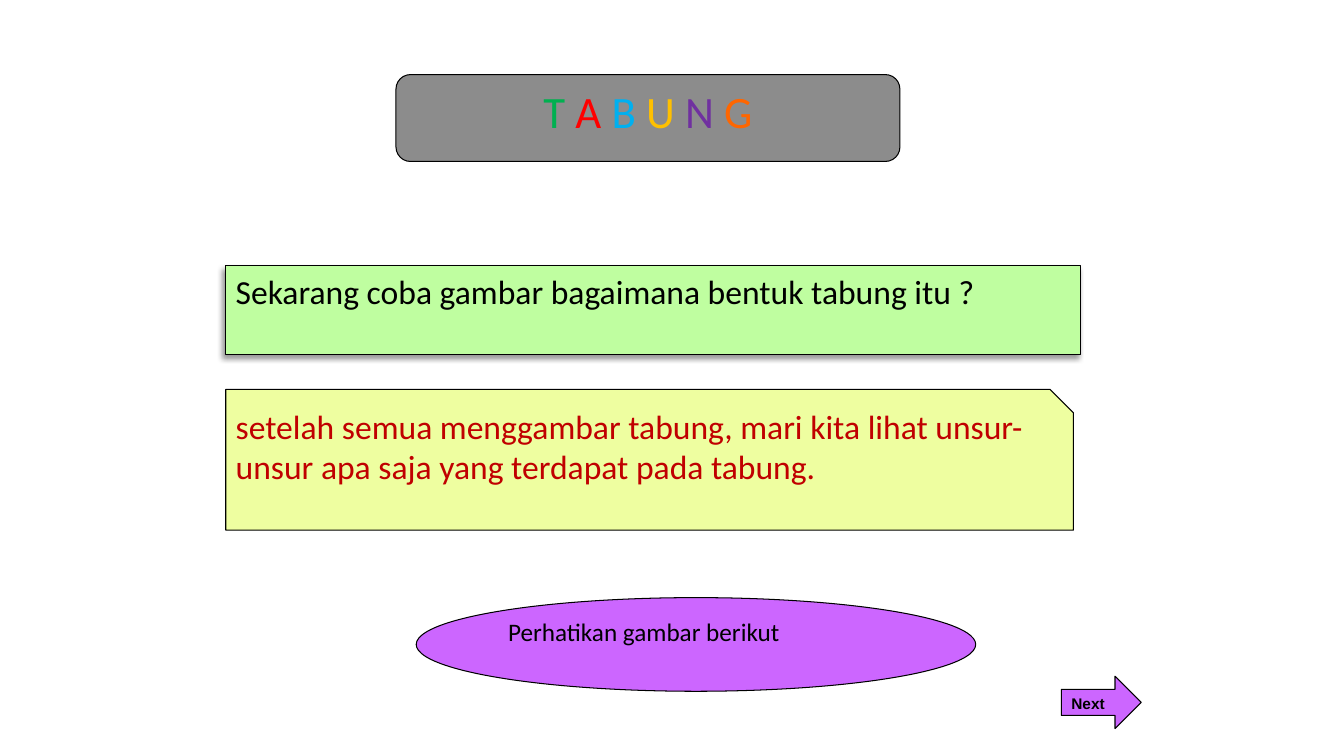
from dataclasses import dataclass

import pptx
import pptx.dml.color
import pptx.enum.shapes
import pptx.enum.text
import pptx.oxml
import pptx.oxml.ns
import pptx.presentation
import pptx.shapes.autoshape
import pptx.slide
import pptx.util

Cm = pptx.util.Cm
Pt = pptx.util.Pt
Geometry = pptx.enum.shapes.MSO_SHAPE
Align = pptx.enum.text.PP_ALIGN

BLACK = "000000"
PURPLE = "CC66FF"


@dataclass(frozen=True)
class Panel:
    geometry: Geometry
    left: float
    top: float
    width: float
    height: float
    fill: str
    runs: tuple[tuple[str, str], ...]  # text and colour
    size: int
    font: str = "Calibri"
    bold: bool = False
    align: Align = Align.LEFT
    shadow: bool = False


PANELS = [
    Panel(Geometry.ROUNDED_RECTANGLE, 9.98, 1.88, 12.7, 2.19, "8C8C8C",
          (("T ", "00B050"), ("A ", "FF0000"), ("B ", "00B0F0"),
           ("U ", "FFC000"), ("N ", "7030A0"), ("G", "FF6600")),
          32, align=Align.CENTER),
    Panel(Geometry.RECTANGLE, 5.69, 6.69, 21.54, 2.24, "BFFEA0",
          (("Sekarang coba gambar bagaimana bentuk tabung itu ?", BLACK),),
          24, shadow=True),
    Panel(Geometry.SNIP_1_RECTANGLE, 5.69, 9.81, 21.36, 3.55, "EEFEA0",
          (("setelah semua menggambar tabung, mari kita lihat "
            "unsur-unsur apa saja yang terdapat pada tabung.", "C00000"),),
          24),
    Panel(Geometry.OVAL, 10.49, 15.06, 14.1, 2.36, PURPLE,
          (("Perhatikan gambar berikut", BLACK),), 18),
    Panel(Geometry.RIGHT_ARROW, 26.75, 17.04, 2.01, 1.32, PURPLE,
          (("Next", BLACK),), 11, font="Arial", bold=True),
]


def rgb(color: str) -> pptx.dml.color.RGBColor:
    return pptx.dml.color.RGBColor.from_string(color)


def add_soft_shadow(shape: pptx.shapes.autoshape.Shape) -> None:
    """Cast a blurred shadow towards the lower left."""
    effects = shape.element.spPr.find(pptx.oxml.ns.qn("a:effectLst"))
    effects.append(pptx.oxml.parse_xml(
        f'<a:outerShdw {pptx.oxml.ns.nsdecls("a")} blurRad="{Pt(4)}" '
        f'dist="{Pt(3)}" dir="{135 * 60000}" algn="tr" rotWithShape="0">'
        f'<a:srgbClr val="{BLACK}"><a:alpha val="40000"/></a:srgbClr>'
        '</a:outerShdw>'))


def draw_panel(slide: pptx.slide.Slide, panel: Panel) -> None:
    shape = slide.shapes.add_shape(
        panel.geometry, Cm(panel.left), Cm(panel.top),
        Cm(panel.width), Cm(panel.height))
    shape.fill.solid()
    shape.fill.fore_color.rgb = rgb(panel.fill)
    shape.line.color.rgb = rgb(BLACK)
    shape.line.width = Pt(0.75)
    shape.shadow.inherit = False
    if panel.shadow:
        add_soft_shadow(shape)

    frame = shape.text_frame
    frame.word_wrap = True
    frame.vertical_anchor = pptx.enum.text.MSO_ANCHOR.TOP
    paragraph = frame.paragraphs[0]
    paragraph.alignment = panel.align
    paragraph.font.name = panel.font
    paragraph.font.size = Pt(panel.size)
    paragraph.font.bold = panel.bold
    for text, color in panel.runs:
        run = paragraph.add_run()
        run.text = text
        run.font.color.rgb = rgb(color)


def main() -> None:
    presentation = pptx.Presentation()
    presentation.slide_width = Cm(33.87)
    presentation.slide_height = Cm(19.05)
    slide = presentation.slides.add_slide(presentation.slide_layouts[6])
    for panel in PANELS:
        draw_panel(slide, panel)
    presentation.save("out.pptx")


if __name__ == "__main__":
    main()
